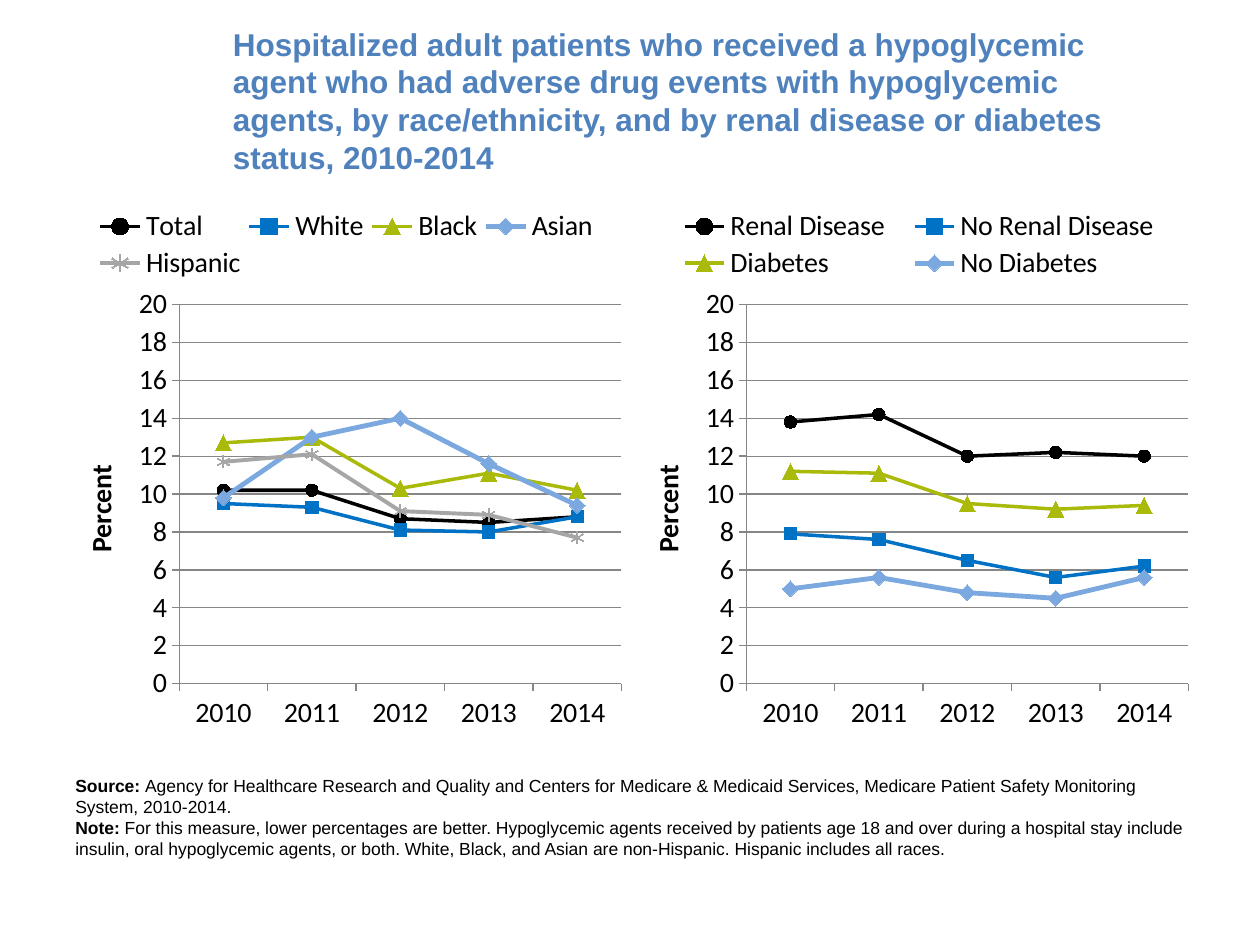
from lxml import etree
from pptx import Presentation
from pptx.chart.data import CategoryChartData
from pptx.dml.color import RGBColor
from pptx.enum import chart as kinds, text
from pptx.oxml import parse_xml
from pptx.oxml.ns import nsdecls, qn
from pptx.util import Pt

BLACK = RGBColor(0x00, 0x00, 0x00)
TITLE_BLUE = RGBColor(0x4F, 0x81, 0xBD)
BLUE = RGBColor(0x00, 0x72, 0xC6)
GREEN = RGBColor(0xAA, 0xBA, 0x0A)
LIGHT_BLUE = RGBColor(0x7B, 0xA8, 0xDF)
GRAY = RGBColor(0xA6, 0xA6, 0xA6)
AXIS_GRAY = RGBColor(0x86, 0x86, 0x86)

MARK = kinds.XL_MARKER_STYLE
STYLES = [
    (BLACK, 2, MARK.CIRCLE, 7),
    (BLUE, 2, MARK.SQUARE, 7),
    (GREEN, 2, MARK.TRIANGLE, 9),
    (LIGHT_BLUE, 2.75, MARK.DIAMOND, 9),
    (GRAY, 2.25, MARK.STAR, 7),
]
YEARS = ["2010", "2011", "2012", "2013", "2014"]
BY_RACE = {
    "Total": (10.2, 10.2, 8.7, 8.5, 8.8),
    "White": (9.5, 9.3, 8.1, 8, 8.8),
    "Black": (12.7, 13, 10.3, 11.1, 10.2),
    "Asian": (9.8, 13, 14, 11.6, 9.4),
    "Hispanic": (11.7, 12.1, 9.1, 8.9, 7.7),
}
BY_STATUS = {
    "Renal Disease": (13.8, 14.2, 12, 12.2, 12),
    "No Renal Disease": (7.9, 7.6, 6.5, 5.6, 6.2),
    "Diabetes": (11.2, 11.1, 9.5, 9.2, 9.4),
    "No Diabetes": (5, 5.6, 4.8, 4.5, 5.6),
}
TITLE = (
    "Hospitalized adult patients who received a hypoglycemic agent who had adverse "
    "drug events with hypoglycemic agents, by race/ethnicity, and by renal disease "
    "or diabetes status, 2010-2014"
)
FOOTNOTES = [
    ("Source: ",
     "Agency for Healthcare Research and Quality and Centers for Medicare & Medicaid "
     "Services, Medicare Patient Safety Monitoring System, 2010-2014."),
    ("Note: ",
     "For this measure, lower percentages are better. Hypoglycemic agents received by "
     "patients age 18 and over during a hospital stay include insulin, oral hypoglycemic "
     "agents, or both. White, Black, and Asian are non-Hispanic. Hispanic includes all races."),
]


def set_font(font, name, size, color=BLACK, bold=False):
    """Set the typeface, size, colour and weight of a font."""
    font.name, font.size, font.bold = name, Pt(size), bold
    font.color.rgb = color


def add_text(slide, box, paragraphs, size, color, anchor):
    """Place paragraphs of (words, bold) runs in the box."""
    frame = slide.shapes.add_textbox(*map(Pt, box)).text_frame
    frame.word_wrap = True
    frame.vertical_anchor = anchor
    for index, runs in enumerate(paragraphs):
        paragraph = frame.add_paragraph() if index else frame.paragraphs[0]
        for words, bold in runs:
            run = paragraph.add_run()
            run.text = words
            set_font(run.font, "Arial", size, color, bold)


def add_title(slide, box):
    """Place the slide title in the box."""
    add_text(slide, box, [[(TITLE, True)]], 18, TITLE_BLUE, text.MSO_ANCHOR.MIDDLE)


def add_footnotes(slide, box):
    """Place the source and the note in the box."""
    paragraphs = [[(label, True), (words, False)] for label, words in FOOTNOTES]
    add_text(slide, box, paragraphs, 10, BLACK, text.MSO_ANCHOR.TOP)


def set_layout(parent, box, inner=False):
    """Fix a chart part at fractions of the chart area."""
    layout = parent.find(qn("c:layout"))
    if layout is None:
        layout = parse_xml(f"<c:layout {nsdecls('c')}/>")
        before = parent.find(qn("c:legendPos"))
        if before is None:
            parent.insert(0, layout)
        else:
            before.addnext(layout)
    for child in list(layout):
        layout.remove(child)
    manual = etree.SubElement(layout, qn("c:manualLayout"))
    settings = [("layoutTarget", "inner")] if inner else []
    settings += [("xMode", "edge"), ("yMode", "edge"), *zip("xywh", map(str, box))]
    for tag, value in settings:
        etree.SubElement(manual, qn(f"c:{tag}")).set("val", value)


def style_axes(chart):
    """Format the year axis and the percent axis."""
    percent = chart.value_axis
    percent.minimum_scale, percent.maximum_scale, percent.major_unit = 0, 20, 2
    percent.has_major_gridlines = True
    percent.major_gridlines.format.line.color.rgb = AXIS_GRAY
    percent.tick_labels.number_format = "0"
    percent.tick_labels.number_format_is_linked = False
    percent.axis_title.text_frame.text = "Percent"
    label = percent.axis_title.text_frame.paragraphs[0].runs[0]
    set_font(label.font, "Calibri", 16, bold=True)
    for axis in (chart.category_axis, percent):
        axis.major_tick_mark = kinds.XL_TICK_MARK.OUTSIDE
        axis.minor_tick_mark = kinds.XL_TICK_MARK.NONE
        axis.format.line.color.rgb = AXIS_GRAY
        set_font(axis.tick_labels.font, "Calibri", 16)


def style_series(series, color, width, marker, size):
    """Format one line and its markers."""
    series.smooth = False
    series.format.line.color.rgb = color
    series.format.line.width = Pt(width)
    series.marker.style, series.marker.size = marker, size
    series.marker.format.line.color.rgb = color
    if marker == MARK.STAR:
        series.marker.format.fill.background()
    else:
        series.marker.format.fill.solid()
        series.marker.format.fill.fore_color.rgb = color


def add_rate_chart(slide, box, rates, plot_box, legend_box):
    """Place a line chart of yearly rates in the box."""
    data = CategoryChartData(number_format="0.0")
    data.categories = YEARS
    for name, values in rates.items():
        data.add_series(name, values)
    chart = slide.shapes.add_chart(
        kinds.XL_CHART_TYPE.LINE_MARKERS, *map(Pt, box), data).chart
    chart.has_title = False
    set_font(chart.font, "Arial", 10)
    chart.plots[0].vary_by_categories = False
    style_axes(chart)
    for series, style in zip(chart.plots[0].series, STYLES):
        style_series(series, *style)
    chart.has_legend = True
    chart.legend.position = kinds.XL_LEGEND_POSITION.TOP
    chart.legend.include_in_layout = False
    set_font(chart.legend.font, "Calibri", 16)
    set_layout(chart.legend._element, legend_box)
    set_layout(chart.value_axis._element.getparent(), plot_box, inner=True)


def main():
    """Build the slide and save it."""
    deck = Presentation()
    deck.slide_width, deck.slide_height = Pt(720), Pt(540)
    slide = deck.slides.add_slide(deck.slide_layouts[6])
    add_title(slide, (126, 12.24, 545.76, 90))
    add_footnotes(slide, (36, 439.2, 648, 55.44))
    add_rate_chart(slide, (36, 115.2, 324, 309.6), BY_RACE,
                   (0.205, 0.19, 0.78, 0.7), (0.05, 0.01, 0.9, 0.14))
    add_rate_chart(slide, (360, 115.2, 324, 309.6), BY_STATUS,
                   (0.205, 0.19, 0.78, 0.7), (0.06, 0.01, 0.9, 0.14))
    deck.save("out.pptx")


if __name__ == "__main__":
    main()
